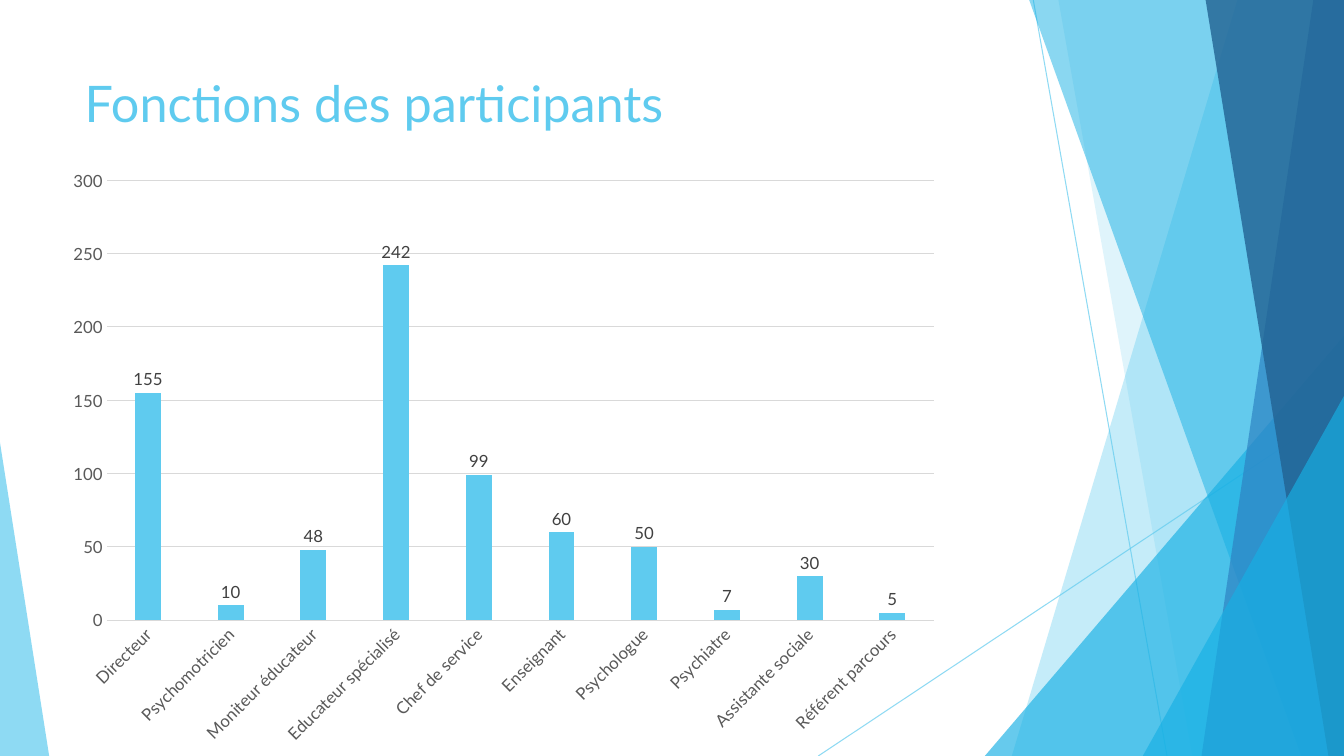
from lxml import etree
from pptx import Presentation
from pptx import util as u
from pptx.chart import data as chart_data
from pptx.dml.color import RGBColor
from pptx.enum import chart as charts, shapes, text
from pptx.oxml import ns

WIDTH, HEIGHT = 33.87, 19.05
COLORS = {
    "sky": "5FCBEF", "cyan": "17B0E4", "blue": "2E83C3", "navy": "226292",
    "grid": "D9D9D9", "axis": "595959", "label": "404040",
}
FUNCTIONS = {
    "Directeur": 155, "Psychomotricien": 10, "Moniteur éducateur": 48,
    "Educateur spécialisé": 242, "Chef de service": 99, "Enseignant": 60,
    "Psychologue": 50, "Psychiatre": 7, "Assistante sociale": 30,
    "Référent parcours": 5,
}


class SlideBuilder:
    font_name = "Lato"

    def __init__(self, presentation):
        self.slide = presentation.slides.add_slide(presentation.slide_layouts[5])

    def color(self, name):
        return RGBColor.from_string(COLORS[name])

    def style_font(self, font, size, color):
        font.name = self.font_name
        font.size = u.Pt(size)
        font.bold = False
        font.color.rgb = self.color(color)

    def set_alpha(self, element, opacity):
        for color in element.spPr.iter(ns.qn("a:srgbClr")):
            etree.SubElement(color, ns.qn("a:alpha")).set("val", str(opacity * 1000))

    def paint(self, shape, color, opacity):
        shape.shadow.inherit = False
        shape.fill.solid()
        shape.fill.fore_color.rgb = self.color(color)
        shape.line.fill.background()
        self.set_alpha(shape._element, opacity)

    def line(self, x1, y1, x2, y2):
        connector = self.slide.shapes.add_connector(
            shapes.MSO_CONNECTOR.STRAIGHT, u.Cm(x1), u.Cm(y1), u.Cm(x2), u.Cm(y2))
        connector.line.color.rgb = self.color("sky")
        connector.line.width = u.Pt(0.75)
        self.set_alpha(connector._element, 70)
        etree.SubElement(connector._element.spPr, ns.qn("a:effectLst"))

    def panel(self, top_x, bottom_x, color, opacity):
        builder = self.slide.shapes.build_freeform(u.Cm(top_x), u.Cm(-0.02))
        corners = [(WIDTH, -0.02), (WIDTH, HEIGHT), (bottom_x, HEIGHT)]
        builder.add_line_segments([(u.Cm(x), u.Cm(y)) for x, y in corners], close=True)
        self.paint(builder.convert_to_shape(), color, opacity)

    def triangle(self, left, top, width, apex, color, opacity):
        shape = self.slide.shapes.add_shape(
            shapes.MSO_SHAPE.ISOSCELES_TRIANGLE,
            u.Cm(left), u.Cm(top), u.Cm(width), u.Cm(HEIGHT - top))
        shape.adjustments[0] = apex
        self.paint(shape, color, opacity)

    def title(self, words, left, top, width, height):
        title = self.slide.shapes.title
        title.left, title.top = u.Cm(left), u.Cm(top)
        title.width, title.height = u.Cm(width), u.Cm(height)
        frame = title.text_frame
        frame.word_wrap = True
        frame.auto_size = text.MSO_AUTO_SIZE.NONE
        frame.vertical_anchor = text.MSO_ANCHOR.TOP
        paragraph = frame.paragraphs[0]
        paragraph.alignment = text.PP_ALIGN.LEFT
        run = paragraph.add_run()
        run.text = words
        self.style_font(run.font, 36, "sky")

    def column_chart(self, values, left, top, width, height):
        data = chart_data.CategoryChartData()
        data.categories = list(values)
        data.add_series("Series 1", list(values.values()))
        chart = self.slide.shapes.add_chart(
            charts.XL_CHART_TYPE.COLUMN_CLUSTERED,
            u.Cm(left), u.Cm(top), u.Cm(width), u.Cm(height), data).chart
        chart.has_legend = False
        chart.has_title = False
        self.style_font(chart.font, 10, "axis")

        for axis in (chart.category_axis, chart.value_axis):
            axis.major_tick_mark = charts.XL_TICK_MARK.NONE
            axis.minor_tick_mark = charts.XL_TICK_MARK.NONE
            self.style_font(axis.tick_labels.font, 12, "axis")
        chart.value_axis.minimum_scale = 0
        chart.value_axis.maximum_scale = 300
        chart.value_axis.major_unit = 50
        chart.value_axis.format.line.fill.background()
        for line in (chart.category_axis.format.line,
                     chart.value_axis.major_gridlines.format.line):
            line.color.rgb = self.color("grid")
            line.width = u.Pt(0.75)
        for body in chart.category_axis._element.iter(ns.qn("a:bodyPr")):
            body.set("rot", "-2700000")
            body.set("vert", "horz")

        plot = chart.plots[0]
        plot.gap_width = 219
        plot.overlap = -27
        plot.vary_by_categories = False
        series = plot.series[0]
        series.format.fill.solid()
        series.format.fill.fore_color.rgb = self.color("sky")
        labels = series.data_labels
        labels.show_value = True
        labels.position = charts.XL_LABEL_POSITION.OUTSIDE_END
        self.style_font(labels.font, 12, "label")


def main():
    presentation = Presentation()
    presentation.slide_width = u.Cm(WIDTH)
    presentation.slide_height = u.Cm(HEIGHT)
    builder = SlideBuilder(presentation)
    builder.title("Fonctions des participants", 1.88, 1.7, 23.88, 3.66)
    builder.line(26.04, 0, 29.41, HEIGHT)
    builder.line(WIDTH, 10.24, 20.62, HEIGHT)
    builder.panel(31.19, 25.5, "sky", 36)
    builder.panel(26.67, 30.05, "sky", 20)
    builder.triangle(24.82, 8.46, 9.05, 1, "cyan", 66)
    builder.panel(25.93, 32.79, "cyan", 50)
    builder.panel(33.1, 30.28, "blue", 70)
    builder.panel(30.38, 33.48, "navy", 80)
    builder.triangle(28.8, 9.98, 5.07, 1, "cyan", 66)
    builder.triangle(0, 11.15, 1.24, 0, "sky", 70)
    builder.column_chart(FUNCTIONS, 1.4, 3.99, 22.58, 15.06)
    presentation.save("out.pptx")


if __name__ == "__main__":
    main()
